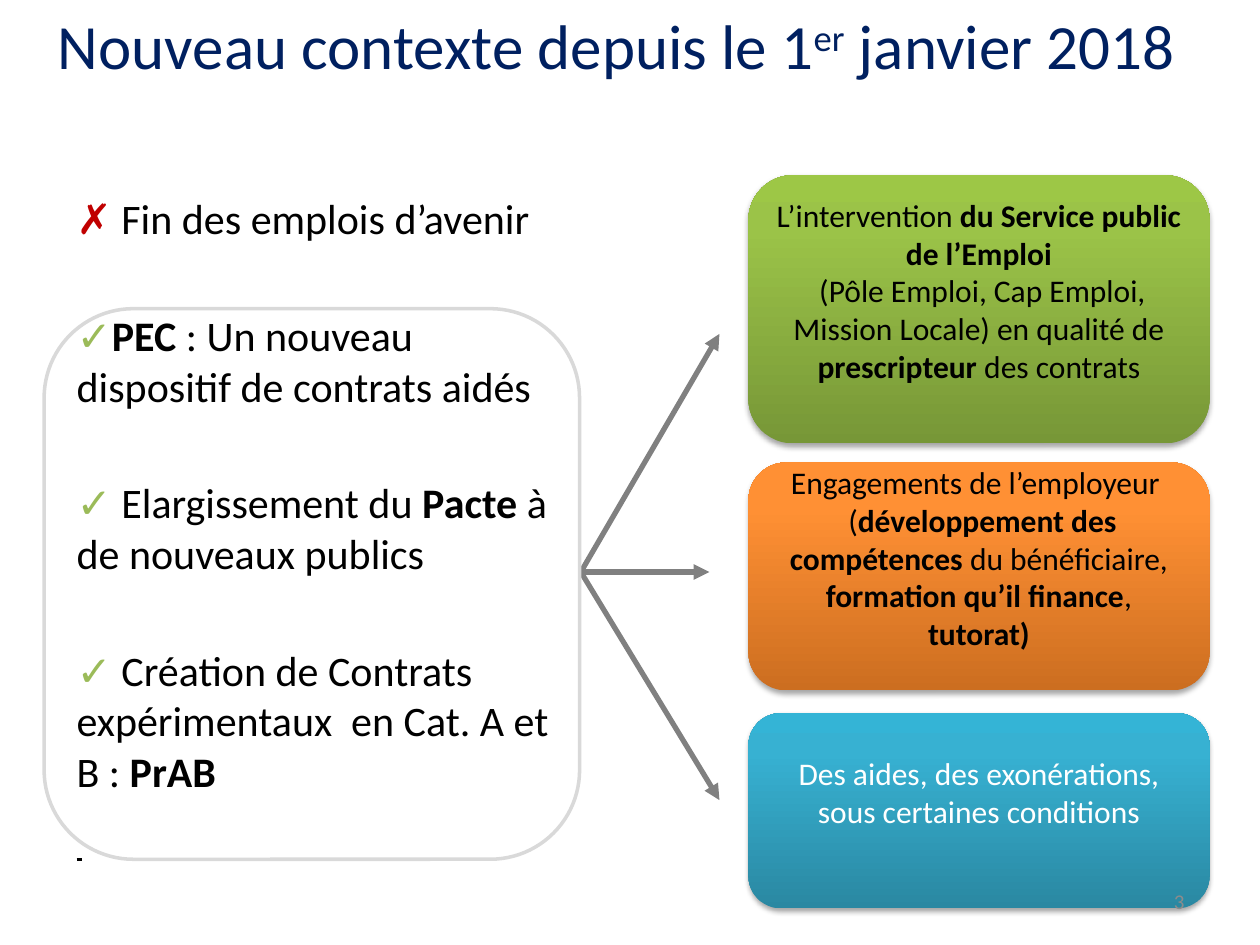
"""Build the slide on the new context for subsidised contracts since January 2018."""
from dataclasses import dataclass

import pptx
import pptx.dml.color
import pptx.enum.shapes
import pptx.enum.text
import pptx.oxml
import pptx.oxml.ns
import pptx.util

Inches = pptx.util.Inches
Pt = pptx.util.Pt
Align = pptx.enum.text.PP_ALIGN
Anchor = pptx.enum.text.MSO_ANCHOR
ROUNDED = pptx.enum.shapes.MSO_SHAPE.ROUNDED_RECTANGLE
NAMESPACE = pptx.oxml.ns.nsdecls("a")


@dataclass(frozen=True)
class Theme:
    font: str = "Calibri"
    title: str = "002060"
    text: str = "000000"
    light: str = "FFFFFF"
    cross: str = "C00000"
    check: str = "9BBB59"
    arrow: str = "808080"
    frame: str = "D9D9D9"
    number: str = "8C8C8C"
    green: tuple = ((0, "779737"), (80, "9BC348"), (100, "9DC746"))
    orange: tuple = ((0, "CC6E20"), (80, "FF9034"), (100, "FF9136"))
    blue: tuple = ((0, "2A88A2"), (80, "37B1D2"), (100, "34B4D6"))
    title_size: int = 36
    body_size: int = 24
    card_size: int = 18
    mark_size: int = 14
    number_size: int = 12


THEME = Theme()
BOLD = {"bold": True}
CHECK = {"color": THEME.check, "bold": True}


def rgb(value):
    """Turn a hex string into a colour."""
    return pptx.dml.color.RGBColor.from_string(value)


def apply(target, values):
    """Set every attribute named in a dict of format values."""
    for name, value in values.items():
        setattr(target, name, value)


def write(shape, paras, size, color, frame=None, para_format=None):
    """Fill a shape with paragraphs, each a list of (text, format) spans."""
    text_frame = shape.text_frame
    apply(text_frame, {"word_wrap": True, **(frame or {})})
    for index, spans in enumerate(paras):
        para = text_frame.paragraphs[0] if index == 0 else text_frame.add_paragraph()
        apply(para, para_format or {})
        if index == 0:
            para.space_before = Pt(0)
        for text, values in spans:
            span = para.add_run()
            span.text = text
            values = {"name": THEME.font, "size": Pt(size), "color": color, **values}
            span.font.color.rgb = rgb(values.pop("color"))
            baseline = values.pop("baseline", None)
            if baseline:
                span.font._element.set("baseline", str(baseline * 1000))
            apply(span.font, values)
    return text_frame


def add_text(page, place, *args):
    """Add a text box holding formatted paragraphs."""
    box = page.shapes.add_textbox(*map(Inches, place))
    return write(box, *args)


def add_card(page, top, height, stops, color, paras):
    """Add a rounded card with a vertical gradient and a soft shadow."""
    card = page.shapes.add_shape(ROUNDED, *map(Inches, (5.94, top, 3.66, height)))
    card.line.fill.background()
    card.fill.gradient()
    card.fill.gradient_angle = 90
    properties = card._element.spPr
    stop_list = properties.find(".//" + pptx.oxml.ns.qn("a:gsLst"))
    for old_stop in list(stop_list):
        stop_list.remove(old_stop)
    for position, value in stops:
        stop_list.append(pptx.oxml.parse_xml(
            f'<a:gs {NAMESPACE} pos="{position * 1000}"><a:srgbClr val="{value}"/></a:gs>'))
    card.shadow.inherit = False
    properties.find(pptx.oxml.ns.qn("a:effectLst")).append(pptx.oxml.parse_xml(
        f'<a:outerShdw {NAMESPACE} blurRad="{Pt(3.1)}" dist="{Pt(1.8)}" dir="5400000" '
        'rotWithShape="0"><a:srgbClr val="000000"><a:alpha val="35000"/></a:srgbClr>'
        '</a:outerShdw>'))
    write(card, paras, THEME.card_size, color,
          {"vertical_anchor": Anchor.MIDDLE, "margin_bottom": Inches(0.35)},
          {"alignment": Align.CENTER})


def add_arrow(page, start, end):
    """Add a grey line with a triangular head at its end."""
    arrow = page.shapes.add_connector(
        pptx.enum.shapes.MSO_CONNECTOR.STRAIGHT, *map(Inches, (*start, *end)))
    arrow.line.width = Pt(3)
    arrow.line.color.rgb = rgb(THEME.arrow)
    arrow.line._get_or_add_ln().append(
        pptx.oxml.parse_xml(f'<a:tailEnd {NAMESPACE} type="triangle"/>'))
    arrow._element.spPr.append(pptx.oxml.parse_xml(f"<a:effectLst {NAMESPACE}/>"))


def add_frame(page, place):
    """Add an unfilled rounded outline."""
    outline = page.shapes.add_shape(ROUNDED, *map(Inches, place))
    outline.shadow.inherit = False
    outline.fill.background()
    outline.line.color.rgb = rgb(THEME.frame)
    outline.line.width = Pt(2)


def add_measures(page):
    """Add the list of ended and new measures."""
    paras = [
        [("✗ ", {"color": THEME.cross}), ("Fin des emplois d’avenir", {})],
        [("✓", CHECK), ("PEC ", BOLD),
         (": Un nouveau dispositif de contrats aidés", {})],
        [("✓ ", CHECK), ("Elargissement du ", {}), ("Pacte", BOLD),
         (" à de nouveaux publics", {})],
        [("✓ ", CHECK), ("Création de Contrats expérimentaux  en Cat. A et B : ", {}),
         ("PrAB", BOLD)],
        [(" ", {"underline": True, "size": Pt(THEME.mark_size)})],
    ]
    text_frame = add_text(page, (0.51, 1.48, 4.02, 5.75), paras, THEME.body_size,
                          THEME.text, None, {"space_before": Pt(38)})
    text_frame.paragraphs[-1].space_before = Pt(21)


def main():
    """Build and save the deck."""
    deck = pptx.Presentation()
    apply(deck, {"slide_width": Inches(10), "slide_height": Inches(7.5)})
    page = deck.slides.add_slide(deck.slide_layouts[6])

    title = [("Nouveau contexte depuis le 1", {}), ("er", {"baseline": 30}),
             (" janvier 2018", {})]
    add_text(page, (0.28, -0.27, 9.22, 1.25), [title], THEME.title_size, THEME.title,
             {"vertical_anchor": Anchor.MIDDLE}, {"alignment": Align.CENTER})
    add_measures(page)

    add_card(page, 1.39, 2.13, THEME.green, THEME.text, [
        [("L’intervention ", {}), ("du Service public de l’Emploi", BOLD)],
        [(" (Pôle Emploi, Cap Emploi, Mission Locale) en qualité de ", {}),
         ("prescripteur", BOLD), (" des contrats", {})],
    ])
    add_card(page, 3.67, 1.81, THEME.orange, THEME.text, [
        [("Engagements de l’employeur ", {})],
        [(" (", {}), ("développement des compétences ", BOLD), ("du bénéficiaire, ", {}),
         ("formation qu’il finance", BOLD), (", ", {}), ("tutorat)", BOLD)],
    ])
    add_card(page, 5.66, 1.55, THEME.blue, THEME.light, [
        [("Des aides, des exonérations, sous certaines conditions", {})],
    ])

    for end in ((5.71, 2.65), (5.63, 4.54), (5.71, 6.35)):
        add_arrow(page, (4.61, 4.54), end)
    add_frame(page, (0.35, 2.45, 4.25, 4.37))
    add_text(page, (7.17, 6.95, 2.33, 0.4), [[("3", {})]], THEME.number_size,
             THEME.number, {"vertical_anchor": Anchor.MIDDLE}, {"alignment": Align.RIGHT})
    deck.save("out.pptx")


if __name__ == "__main__":
    main()
